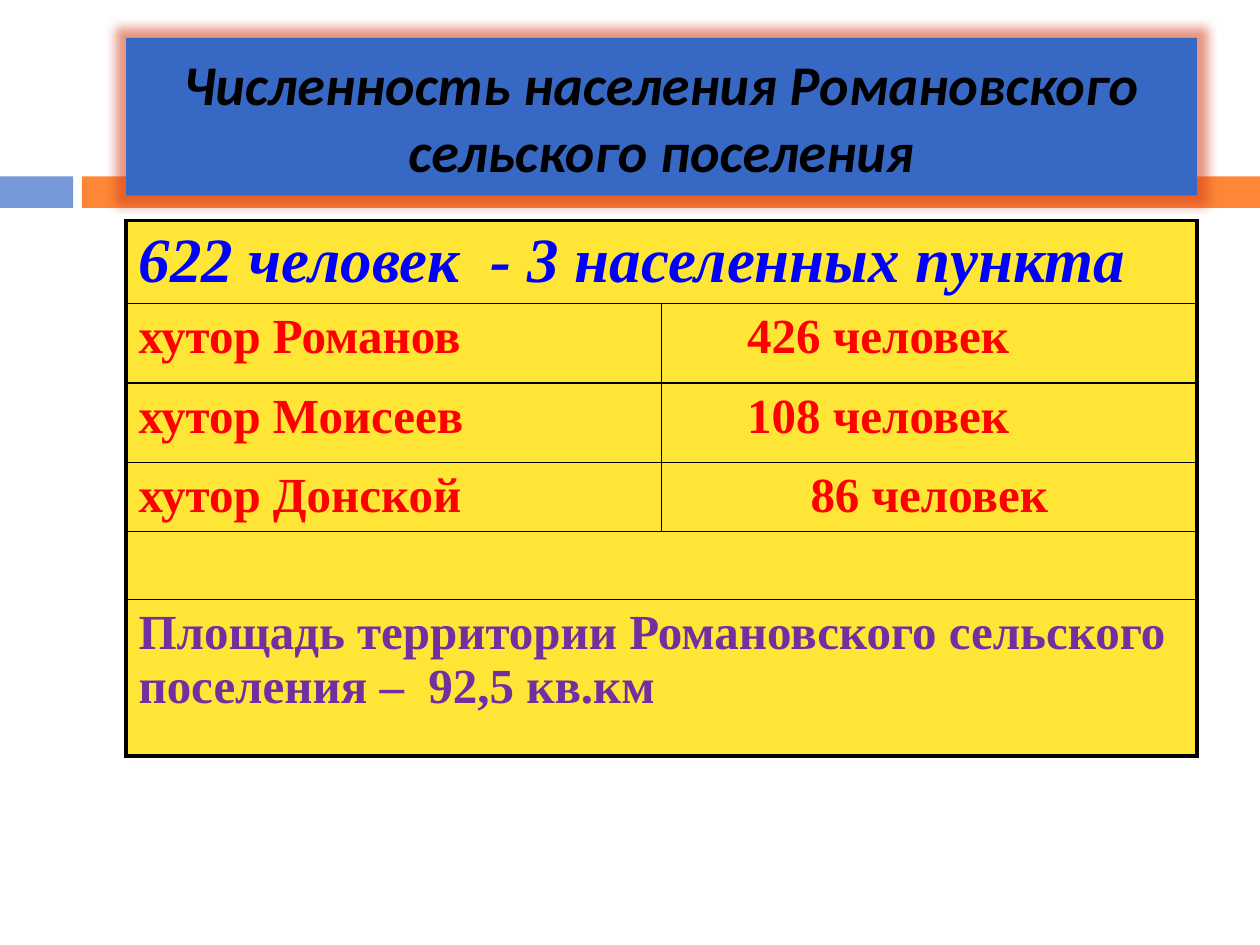
from lxml.etree import SubElement
from pptx import Presentation
from pptx.dml.color import RGBColor
from pptx.enum.shapes import MSO_SHAPE
from pptx.enum.text import MSO_ANCHOR, PP_ALIGN
from pptx.oxml import parse_xml
from pptx.oxml.ns import nsdecls, qn
from pptx.util import Inches, Pt

YELLOW, RED = "FFE636", "FF0000"
SERIF = {"name": "Times New Roman", "bold": True, "size": Pt(28)}
HEAD = {**SERIF, "size": Pt(36), "italic": True}


def paint(part, color):
    """Fill a shape, cell or font with one solid colour."""
    part.fill.solid()
    part.fill.fore_color.rgb = RGBColor.from_string(color)


def write(frame, text, color, look, align=PP_ALIGN.LEFT):
    para = frame.paragraphs[0]
    para.alignment = align
    run = para.add_run()
    run.text = text
    for key, value in look.items():
        setattr(run.font, key, value)
    paint(run.font, color)


def add_bands(slide, left, top, width, height):
    """Two-colour strip behind the title, parted by a narrow gap."""
    first, gap = 0.58, 0.07
    start = first + gap
    for x, wide, color in ((0, first, "7598D9"),
                           (start, width - start, "FE8637")):
        band = slide.shapes.add_shape(
            MSO_SHAPE.RECTANGLE, Inches(left + x), Inches(top),
            Inches(wide), Inches(height))
        band.shadow.inherit = False
        paint(band, color)
        band.line.fill.background()


def add_title(slide, left, top, width, height):
    title = slide.shapes.title
    place = {"left": left, "top": top, "width": width, "height": height}
    for key, value in place.items():
        setattr(title, key, Inches(value))
    paint(title, "3668C4")
    # Soft red glow
    title._element.spPr.append(parse_xml(
        f'<a:effectLst {nsdecls("a")}><a:glow rad="139700">'
        '<a:srgbClr val="D2401E"><a:alpha val="55000"/></a:srgbClr>'
        '</a:glow></a:effectLst>'))
    frame = title.text_frame
    frame.word_wrap = True
    frame.vertical_anchor = MSO_ANCHOR.MIDDLE
    look = {"name": "Calibri", "size": Pt(32), "bold": True, "italic": True}
    write(frame, "Численность населения Романовского сельского поселения",
          "000000", look, PP_ALIGN.CENTER)
    # Bring the title in front of the bands
    slide.shapes._spTree.append(title._element)


def add_edge(cell, side, points):
    line = SubElement(cell._tc.get_or_add_tcPr(), qn(f"a:ln{side}"),
                      w=str(Pt(points)))
    fill = SubElement(line, qn("a:solidFill"))
    SubElement(fill, qn("a:srgbClr"), val="000000")


def add_census(slide, left, top, width):
    # Each row: height, texts, colour, font; one text spans both columns
    rows = [
        (0.66, ["622 человек  - 3 населенных пункта"], "0000FF", HEAD),
        (0.63, ["хутор Романов", "426 человек"], RED, SERIF),
        (0.63, ["хутор Моисеев", "108 человек"], RED, SERIF),
        (0.55, ["хутор Донской", "86 человек"], RED, SERIF),
        (0.54, [""], RED, SERIF),
        (1.24, ["Площадь территории Романовского сельского "
                "поселения –  92,5 кв.км"], "7030A0", SERIF),
    ]
    tall = sum(row[0] for row in rows)
    table = slide.shapes.add_table(
        len(rows), 2, Inches(left), Inches(top),
        Inches(width), Inches(tall)).table
    last = len(rows) - 1
    for r, (height, texts, color, look) in enumerate(rows):
        table.rows[r].height = Inches(height)
        whole = len(texts) == 1
        if whole:
            table.cell(r, 0).merge(table.cell(r, 1))
        for c in range(2):
            cell = table.cell(r, c)
            # Thick outer frame, thin inner rules
            outer = {"L": c == 0, "R": c == 1 or whole,
                     "T": r == 0, "B": r == last}
            for side, thick in outer.items():
                add_edge(cell, side, 2.25 if thick else 1)
            paint(cell, YELLOW)
        for c, text in enumerate(texts):
            if text:
                write(table.cell(r, c).text_frame, text, color, look)
    # Counts: the first two are indented, the last is centred
    for r in (1, 2):
        table.cell(r, 1).margin_left = Inches(0.68)
    count = table.cell(3, 1).text_frame.paragraphs[0]
    count.alignment = PP_ALIGN.CENTER


def main():
    deck = Presentation()
    deck.slide_width, deck.slide_height = Inches(10), Inches(7.5)
    slide = deck.slides.add_slide(deck.slide_layouts[5])
    add_bands(slide, 0, 1.4, 10, 0.25)
    add_title(slide, 1, 0.3, 8.5, 1.25)
    add_census(slide, 1, 1.75, 8.5)
    deck.save("out.pptx")


if __name__ == "__main__":
    main()
